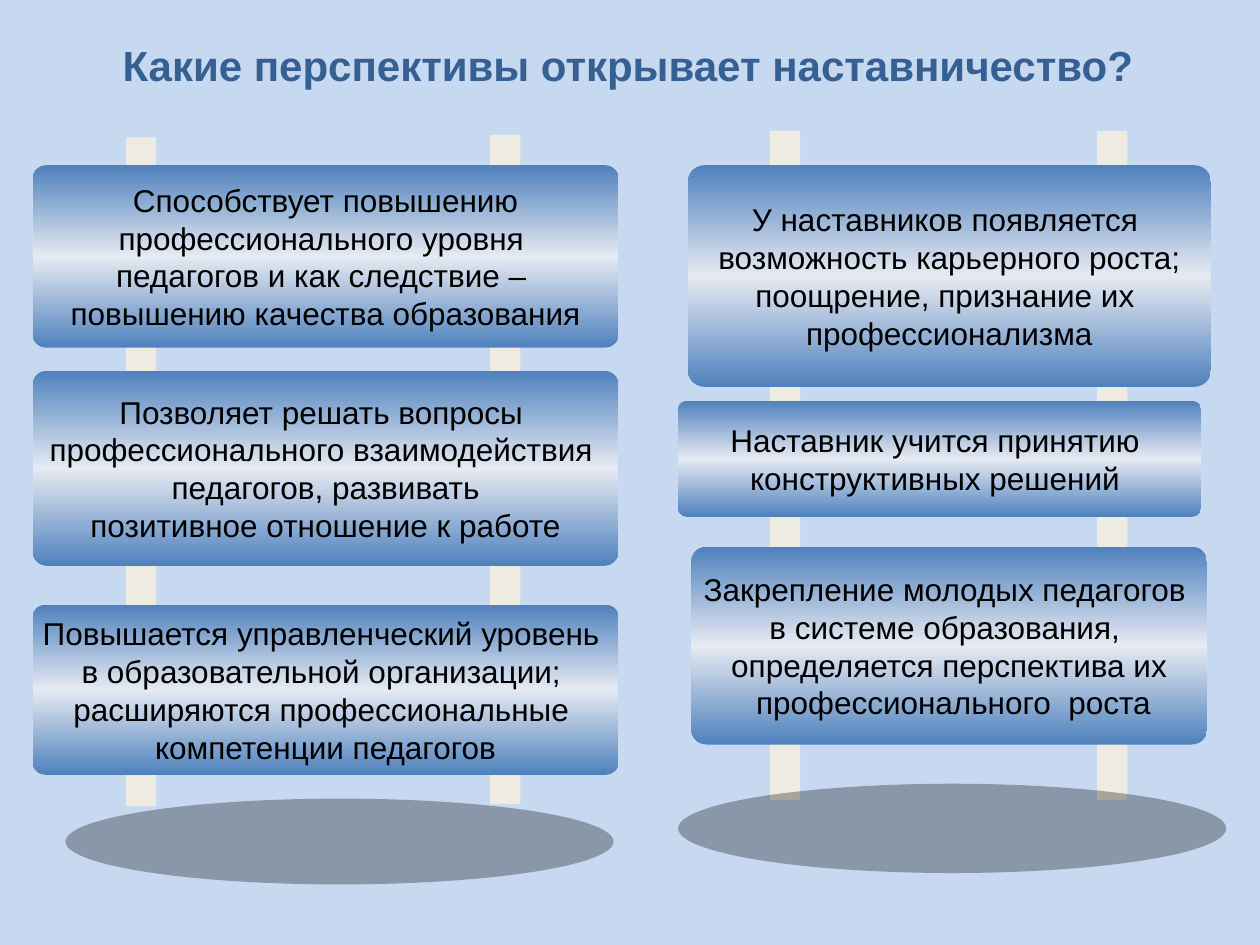
from copy import deepcopy

from lxml import etree
from pptx import Presentation
from pptx.dml.color import RGBColor
from pptx.enum.shapes import MSO_SHAPE
from pptx.enum.text import MSO_ANCHOR, PP_ALIGN
from pptx.oxml.ns import qn
from pptx.util import Cm, Pt

RECTANGLE = MSO_SHAPE.RECTANGLE
ROUNDED = MSO_SHAPE.ROUNDED_RECTANGLE
OVAL = MSO_SHAPE.OVAL
MIDDLE = MSO_ANCHOR.MIDDLE
CENTER = PP_ALIGN.CENTER

COLORS = {
    "background": "C6D9F1",
    "post": "EEECE1",
    "panel_edge": "4F81BD",
    "panel_middle": "E6EAF2",
    "shadow": "000000",
    "text": "000000",
    "title": "376092",
}
TITLE_FORMAT = {"name": "Arial", "size": Pt(24), "bold": True}
PANEL_FORMAT = {"name": "Arial", "size": Pt(18), "bold": False}

POST_WIDTH, POST_HEIGHT = 0.61, 13.49
POSTS = [(2.54, 2.77), (9.88, 2.72), (15.52, 2.64), (22.12, 2.64)]
SHADOWS = [(1.32, 16.1, 11.05, 1.73), (13.67, 15.8, 11.05, 1.8)]

LEFT_X, LEFT_WIDTH = 0.66, 11.81
PANELS = [
    ((LEFT_X, 3.33, LEFT_WIDTH, 3.68), [
        "Способствует повышению",
        "профессионального уровня ",
        "педагогов и как следствие – ",
        "повышению качества образования",
    ]),
    ((LEFT_X, 7.47, LEFT_WIDTH, 3.94), [
        "Позволяет решать вопросы ",
        "профессионального взаимодействия ",
        "педагогов, развивать",
        "позитивное отношение к работе",
    ]),
    ((LEFT_X, 12.19, LEFT_WIDTH, 3.43), [
        "Повышается управленческий уровень ",
        "в образовательной организации; ",
        "расширяются профессиональные ",
        "компетенции педагогов",
    ]),
    ((13.87, 3.33, 10.54, 4.47), [
        "У наставников появляется ",
        "возможность карьерного роста;",
        "поощрение, признание их ",
        "профессионализма",
    ]),
    ((13.67, 8.08, 10.54, 2.34), [
        "Наставник учится принятию ",
        "конструктивных решений ",
    ]),
    ((13.94, 11.02, 10.39, 3.99), [
        "Закрепление молодых педагогов ",
        "в системе образования, ",
        "определяется перспектива их",
        " профессионального  роста",
    ]),
]


def color(name):
    return RGBColor.from_string(COLORS[name])


def write_lines(box, lines, text_format, color_name, wrap):
    frame = box.text_frame
    frame.word_wrap = wrap
    frame.vertical_anchor = MIDDLE
    for index, line in enumerate(lines):
        para = frame.add_paragraph() if index else frame.paragraphs[0]
        para.alignment = CENTER
        span = para.add_run()
        span.text = line
        for attribute, value in text_format.items():
            setattr(span.font, attribute, value)
        span.font.color.rgb = color(color_name)


def add_plain_shape(page, kind, bounds):
    shape = page.shapes.add_shape(kind, *map(Cm, bounds))
    shape.shadow.inherit = False
    shape.line.fill.background()
    return shape


def add_solid_shape(page, kind, bounds, color_name):
    shape = add_plain_shape(page, kind, bounds)
    shape.fill.solid()
    shape.fill.fore_color.rgb = color(color_name)
    return shape


def add_shadow(page, bounds):
    oval = add_solid_shape(page, OVAL, bounds, "shadow")
    fill_color = oval.fill._xPr.find(qn("a:solidFill"))[0]
    etree.SubElement(fill_color, qn("a:alpha"), val="30000")


def fill_with_gradient(shape):
    shape.fill.gradient()
    shape.fill.gradient_angle = 270
    stop_list = shape.fill._xPr.find(qn("a:gradFill")).find(qn("a:gsLst"))
    stop_list.insert(1, deepcopy(stop_list[0]))
    stops = [(0, "panel_edge"), (0.5, "panel_middle"), (1, "panel_edge")]
    for stop, (position, color_name) in zip(shape.fill.gradient_stops, stops):
        stop.position = position
        stop.color.rgb = color(color_name)


def add_panel(page, bounds, lines):
    panel = add_plain_shape(page, ROUNDED, bounds)
    panel.adjustments[0] = 0.076
    fill_with_gradient(panel)
    write_lines(panel, lines, PANEL_FORMAT, "text", False)


def add_title(page, text):
    box = page.shapes.add_textbox(Cm(1.04), Cm(0.48), Cm(23.24), Cm(1.65))
    write_lines(box, [text], TITLE_FORMAT, "title", True)


def main():
    deck = Presentation()
    deck.slide_width, deck.slide_height = Cm(25.4), Cm(19.05)
    page = deck.slides.add_slide(deck.slide_layouts[6])
    page.background.fill.solid()
    page.background.fill.fore_color.rgb = color("background")

    for left, top in POSTS:
        add_solid_shape(page, RECTANGLE, (left, top, POST_WIDTH, POST_HEIGHT), "post")
    for bounds in SHADOWS:
        add_shadow(page, bounds)
    for bounds, lines in PANELS:
        add_panel(page, bounds, lines)
    add_title(page, "Какие перспективы открывает наставничество?")
    deck.save("out.pptx")


if __name__ == "__main__":
    main()
